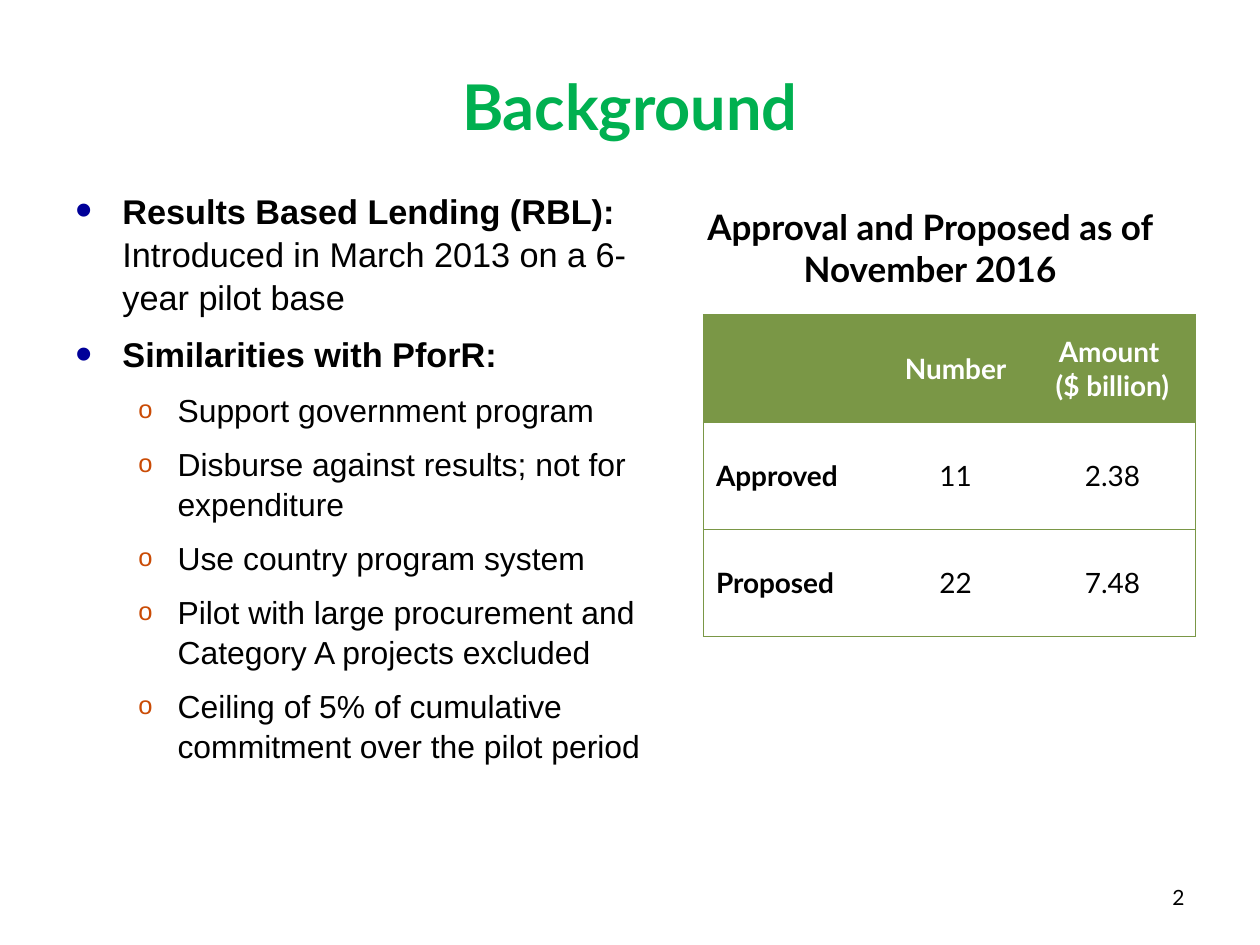
from lxml import etree
from pptx import Presentation
from pptx.dml.color import RGBColor
from pptx.enum.text import MSO_ANCHOR, PP_ALIGN
from pptx.oxml.ns import qn
from pptx.util import Cm, Pt

LEFT, CENTER, RIGHT = PP_ALIGN.LEFT, PP_ALIGN.CENTER, PP_ALIGN.RIGHT
TOP, MIDDLE = MSO_ANCHOR.TOP, MSO_ANCHOR.MIDDLE
GREEN, BLACK, WHITE, OLIVE = "00B050", "000000", "FFFFFF", "7A9746"


def rgb(value):
    return RGBColor.from_string(value)


class SlideBuilder:
    """Holds the style and the current slide, and adds its elements."""

    heading = {"name": "Lato", "size": Pt(20), "bold": True}
    levels = [
        {"size": 19.6, "left": 0.95, "hang": 0.95, "mark": "•", "color": "000099", "scale": 140},
        {"size": 18.2, "left": 2.06, "hang": 0.79, "mark": "o", "color": "CA4B05", "scale": 80},
    ]

    def __init__(self, prs):
        self.s = prs.slides.add_slide(prs.slide_layouts[6])

    def run(self, p, text, color=BLACK, **formats):
        r = p.add_run()
        r.text = text
        r.font.color.rgb = rgb(color)
        for key, value in {**self.heading, **formats}.items():
            setattr(r.font, key, value)

    def box(self, x, y, w, h, anchor=TOP):
        tf = self.s.shapes.add_textbox(Cm(x), Cm(y), Cm(w), Cm(h)).text_frame
        tf.word_wrap = True
        tf.vertical_anchor = anchor
        return tf

    def text(self, text, frame, align=CENTER, anchor=TOP, **formats):
        p = self.box(*frame, anchor).paragraphs[0]
        p.alignment = align
        self.run(p, text, **formats)

    def bullet(self, p, level):
        style = self.levels[level]
        pPr = p._p.get_or_add_pPr()
        pPr.set("marL", str(Cm(style["left"])))
        pPr.set("indent", str(-Cm(style["hang"])))
        color = etree.SubElement(pPr, qn("a:buClr"))
        etree.SubElement(color, qn("a:srgbClr"), val=style["color"])
        etree.SubElement(pPr, qn("a:buSzPct"), val=str(style["scale"] * 1000))
        etree.SubElement(pPr, qn("a:buFont"), typeface="Arial")
        etree.SubElement(pPr, qn("a:buChar"), char=style["mark"])

    def bullets(self, items, frame):
        tf = self.box(*frame)
        for i, (level, bold, plain) in enumerate(items):
            p = tf.add_paragraph() if i else tf.paragraphs[0]
            p.level = level
            p.space_before = Pt(8)
            p.line_spacing = 1.05
            self.bullet(p, level)
            for text, is_bold in ((bold, True), (plain, False)):
                if text:
                    self.run(p, text, name="Arial", size=Pt(self.levels[level]["size"]), bold=is_bold)

    def border(self, cell):
        tcPr = cell._tc.get_or_add_tcPr()
        for i, side in enumerate(("L", "R", "T", "B")):
            outer = side in "TB" or side == "L" and cell._tc.col_idx == 0 \
                or side == "R" and cell._tc.col_idx == 2
            ln = etree.Element(qn(f"a:ln{side}"), w=str(Pt(0.75)))
            fill = etree.SubElement(ln, qn("a:solidFill" if outer else "a:noFill"))
            if outer:
                etree.SubElement(fill, qn("a:srgbClr"), val=OLIVE)
            tcPr.insert(i, ln)

    def table(self, rows, widths, row_height, x, y):
        sp = self.s.shapes.add_table(len(rows), len(widths), Cm(x), Cm(y),
                                     Cm(sum(widths)), Cm(row_height * len(rows)))
        table = sp.table
        for column, width in zip(table.columns, widths):
            column.width = Cm(width)
        for i, values in enumerate(rows):
            table.rows[i].height = Cm(row_height)
            for j, value in enumerate(values):
                cell = table.cell(i, j)
                cell.vertical_anchor = MIDDLE
                cell.fill.solid()
                cell.fill.fore_color.rgb = rgb(WHITE if i else OLIVE)
                self.border(cell)
                tf = cell.text_frame
                for k, line in enumerate(value.splitlines()):
                    p = tf.add_paragraph() if k else tf.paragraphs[0]
                    p.alignment = CENTER if j else LEFT
                    self.run(p, line, BLACK if i else WHITE, size=Pt(16), bold=i == 0 or j == 0)


def main():
    prs = Presentation()
    prs.slide_width, prs.slide_height = Cm(25.4), Cm(19.05)
    slide = SlideBuilder(prs)
    slide.text("Background", (0, 1.27, 25.4, 1.7), anchor=MIDDLE, color=GREEN, size=Pt(36))
    slide.bullets([
        (0, "Results Based Lending (RBL): ", "Introduced in March 2013 on a 6-year pilot base"),
        (0, "Similarities with PforR:", ""),
        (1, "", "Support government program"),
        (1, "", "Disburse against results; not for expenditure"),
        (1, "", "Use country program system"),
        (1, "", "Pilot with large procurement and Category A projects excluded"),
        (1, "", "Ceiling of 5% of cumulative commitment over the pilot period"),
    ], (1.27, 3.66, 12.27, 13.28))
    slide.text("2", (18.21, 17.58, 5.92, 1.02), align=RIGHT, anchor=MIDDLE, size=Pt(12), bold=False)
    slide.table([
        ("", "Number", "Amount \n($ billion)"),
        ("Approved", "11", "2.38"),
        ("Proposed", "22", "7.48"),
    ], (3.6, 2.97, 3.35), 2.16, 14.18, 6.35)
    slide.text("Approval and Proposed as of November 2016", (13.77, 4.01, 9.96, 1.96))
    prs.save("out.pptx")


if __name__ == "__main__":
    main()
